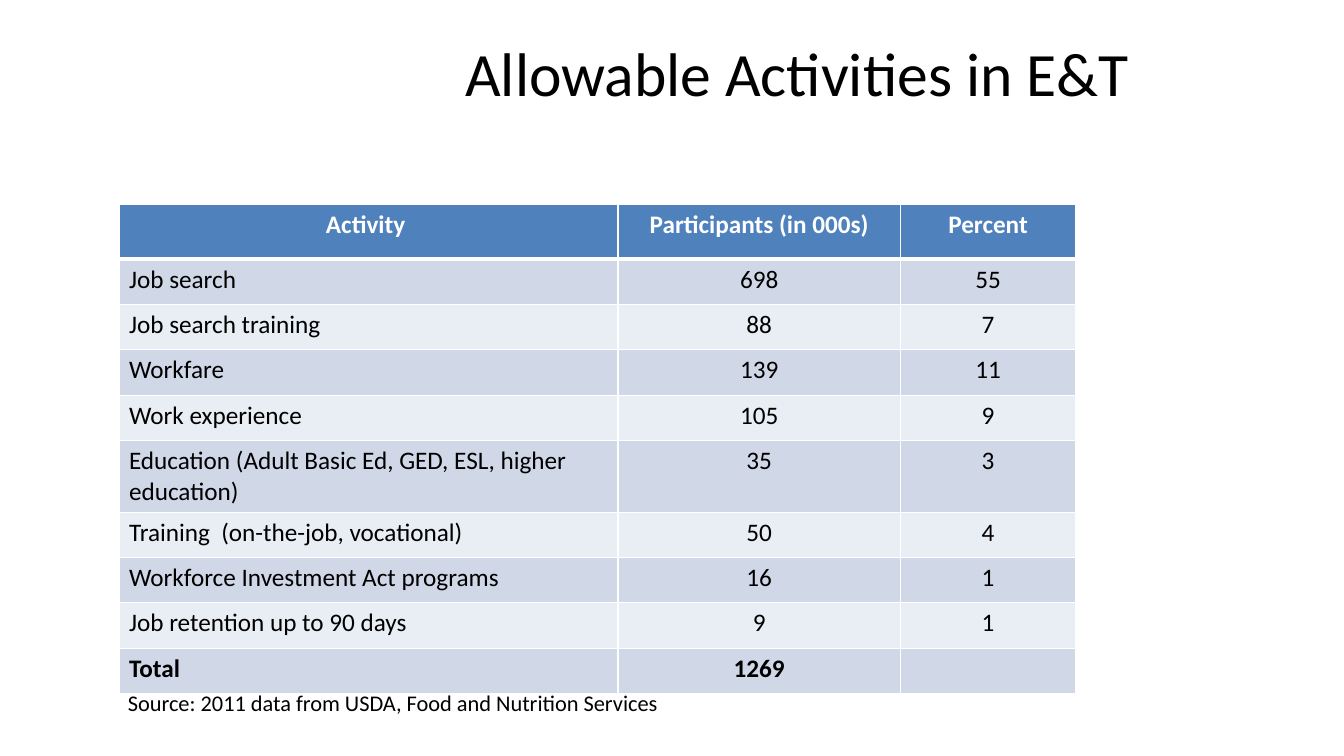
"""Build the slide on allowable E&T activities."""
from dataclasses import dataclass

import lxml.etree
import pptx
import pptx.dml.color
import pptx.enum.text
import pptx.oxml.ns
import pptx.util

RGBColor = pptx.dml.color.RGBColor
Inches = pptx.util.Inches
Pt = pptx.util.Pt
Align = pptx.enum.text.PP_ALIGN

BLACK = RGBColor(0x00, 0x00, 0x00)
WHITE = RGBColor(0xFF, 0xFF, 0xFF)
HEADER_BLUE = RGBColor(0x4F, 0x81, 0xBD)
BAND_DARK = RGBColor(0xD0, 0xD8, 0xE8)
BAND_LIGHT = RGBColor(0xE9, 0xED, 0xF4)
FONT = "Calibri"
COLUMN_WIDTHS = (4.95, 2.8, 1.74)
HEADER_HEIGHT = 0.54
ROW_HEIGHT = 0.45


@dataclass(frozen=True)
class Label:
    text: str
    left: float
    top: float
    width: float
    height: float
    size: float
    align: Align


@dataclass(frozen=True)
class Activity:
    name: str
    participants: str
    percent: str


LABELS = (
    Label("Allowable Activities in E&T", 4.21, 0.3, 7.4, 0.85, 44, Align.CENTER),
    Label("Source: 2011 data from USDA, Food and Nutrition Services",
          1.17, 6.79, 7, 0.37, 16, Align.LEFT),
)
ACTIVITIES = (
    Activity("Activity ", "Participants (in 000s)", "Percent"),
    Activity("Job search", "698", "55"),
    Activity("Job search training", "88", "7"),
    Activity("Workfare", "139", "11"),
    Activity("Work experience", "105", "9"),
    Activity("Education (Adult Basic Ed, GED, ESL, higher education)", "35", "3"),
    Activity("Training  (on-the-job, vocational)", "50", "4"),
    Activity("Workforce Investment Act programs", "16", "1"),
    Activity("Job retention up to 90 days", "9", "1"),
    Activity("Total", "1269", ""),
)


def style_paragraph(paragraph, size: float, color: RGBColor, align: Align,
                    bold: bool = False) -> None:
    paragraph.alignment = align
    paragraph.font.name = FONT
    paragraph.font.size = Pt(size)
    paragraph.font.bold = bold
    paragraph.font.color.rgb = color


def add_label(slide, label: Label) -> None:
    shape = slide.shapes.add_textbox(Inches(label.left), Inches(label.top),
                                     Inches(label.width), Inches(label.height))
    shape.text_frame.word_wrap = True
    paragraph = shape.text_frame.paragraphs[0]
    paragraph.text = label.text
    style_paragraph(paragraph, label.size, BLACK, label.align)


def set_borders(cell, widths: dict[str, float]) -> None:
    properties = cell._tc.get_or_add_tcPr()
    qn = pptx.oxml.ns.qn
    for position, (side, width) in enumerate(widths.items()):
        line = lxml.etree.Element(qn(f"a:{side}"), w=str(Pt(width)))
        fill = lxml.etree.SubElement(line, qn("a:solidFill"))
        lxml.etree.SubElement(fill, qn("a:srgbClr"), val=str(WHITE))
        properties.insert(position, line)


def add_activity_table(slide) -> None:
    height = HEADER_HEIGHT + ROW_HEIGHT * (len(ACTIVITIES) - 1)
    frame = slide.shapes.add_table(len(ACTIVITIES), len(COLUMN_WIDTHS),
                                   Inches(1.18), Inches(2.03),
                                   Inches(sum(COLUMN_WIDTHS)), Inches(height))
    table = frame.table
    for column, width in zip(table.columns, COLUMN_WIDTHS):
        column.width = Inches(width)
    for index, activity in enumerate(ACTIVITIES):
        header = index == 0
        bold = header or activity.name == "Total"
        band = BAND_DARK if index % 2 else BAND_LIGHT
        table.rows[index].height = Inches(HEADER_HEIGHT if header else ROW_HEIGHT)
        values = (activity.name, activity.participants, activity.percent)
        for column_index, value in enumerate(values):
            cell = table.cell(index, column_index)
            cell.fill.solid()
            cell.fill.fore_color.rgb = HEADER_BLUE if header else band
            set_borders(cell, {"lnL": 1, "lnR": 1, "lnT": 3 if index == 1 else 1,
                               "lnB": 3 if header else 1})
            paragraph = cell.text_frame.paragraphs[0]
            paragraph.text = value
            align = Align.CENTER if header or column_index else Align.LEFT
            style_paragraph(paragraph, 18, WHITE if header else BLACK, align, bold)


def main() -> None:
    presentation = pptx.Presentation()
    presentation.slide_width = Inches(13.33)
    presentation.slide_height = Inches(7.5)
    slide = presentation.slides.add_slide(presentation.slide_layouts[6])
    add_activity_table(slide)
    for label in LABELS:
        add_label(slide, label)
    presentation.save("out.pptx")


if __name__ == "__main__":
    main()
